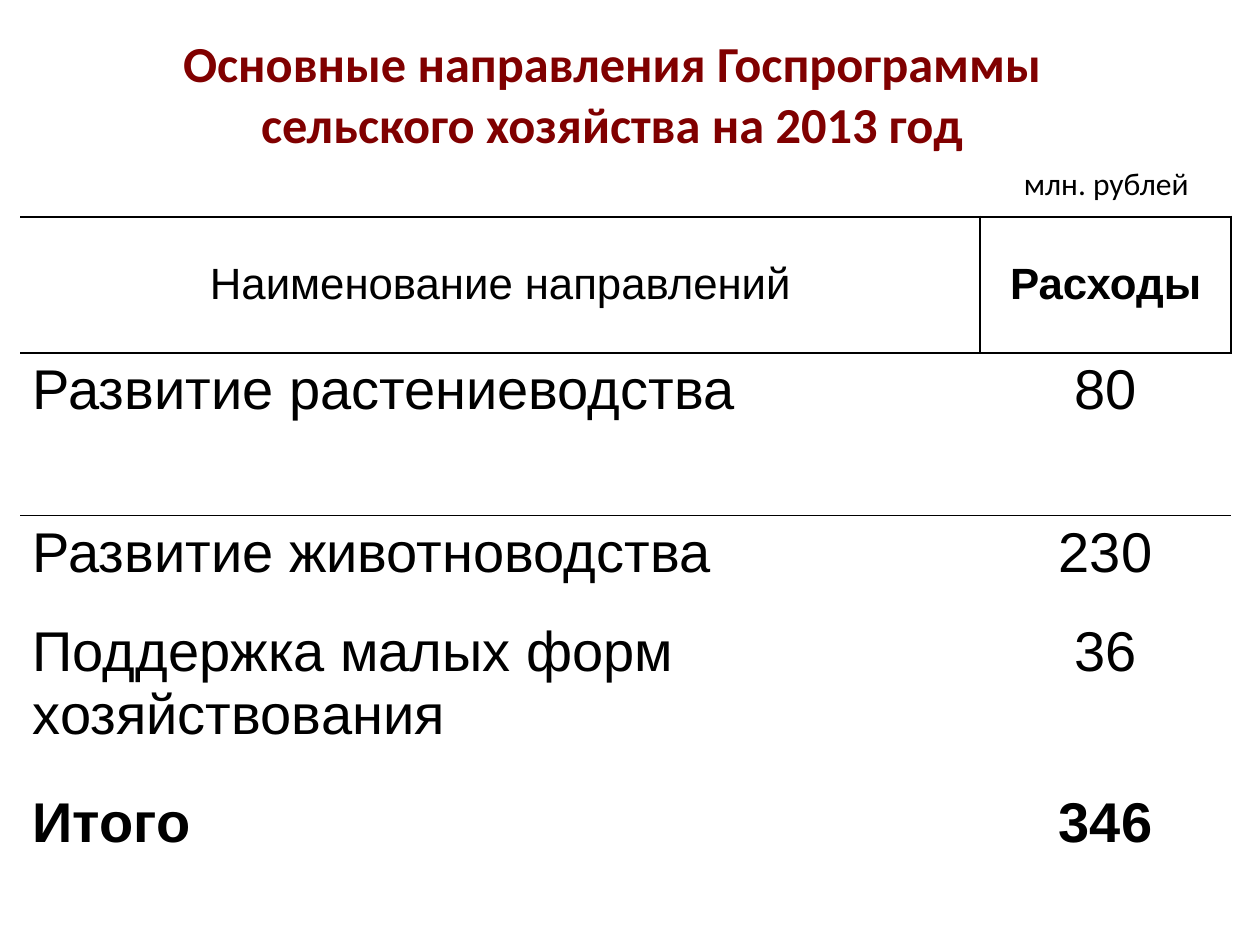
import pptx
import pptx.dml.color
import pptx.enum.text
import pptx.oxml
import pptx.oxml.ns
import pptx.util
from pptx.util import Inches

COLORS = {"title": "800000", "text": "000000", "cell": "FFFFFF"}
NO_STYLE = "{2D5ABB26-0587-4C30-8999-92F81FD0307C}"
ALIGN = pptx.enum.text.PP_ALIGN
ANCHOR = pptx.enum.text.MSO_ANCHOR


def write_text(frame, text, size, font="Arial", color="text", bold=False, align=ALIGN.CENTER):
    frame.word_wrap = True
    paragraph = frame.paragraphs[0]
    paragraph.alignment = align
    run = paragraph.add_run()
    run.text = text
    run.font.name = font
    run.font.size = pptx.util.Pt(size)
    run.font.bold = bold
    run.font.color.rgb = pptx.dml.color.RGBColor.from_string(COLORS[color])


def add_borders(cell, **widths):
    """Draw cell borders; widths in points, keyed by lnL, lnR, lnT, lnB."""
    properties = cell._tc.get_or_add_tcPr()
    sides = [side for side in ("lnL", "lnR", "lnT", "lnB") if side in widths]
    for index, side in enumerate(sides):
        properties.insert(index, pptx.oxml.parse_xml(
            f'<a:{side} {pptx.oxml.ns.nsdecls("a")} w="{pptx.util.Pt(widths[side])}">'
            f'<a:solidFill><a:srgbClr val="{COLORS["text"]}"/></a:solidFill></a:{side}>'))


presentation = pptx.Presentation()
presentation.slide_width = Inches(10)
presentation.slide_height = Inches(7.5)
slide = presentation.slides.add_slide(presentation.slide_layouts[5])

title = slide.shapes.title
title.left, title.top, title.width, title.height = (
    Inches(value) for value in (0.5, 0.34, 8.72, 0.79))
title.text_frame.auto_size = pptx.enum.text.MSO_AUTO_SIZE.NONE
title.text_frame.vertical_anchor = ANCHOR.MIDDLE
write_text(title.text_frame, "Основные направления Госпрограммы сельского хозяйства на 2013 год",
           28.8, font="Calibri", color="title", bold=True)

rows = [
    ("Наименование направлений", "Расходы", 1.08),
    ("Развитие растениеводства", "80", 1.29),
    ("Развитие животноводства", "230", 0.79),
    ("Поддержка малых форм хозяйствования", "36", 1.35),
    ("Итого", "346", 1.03),
]
table = slide.shapes.add_table(
    len(rows), 2, Inches(0.16), Inches(1.72), Inches(9.61), Inches(5.54)).table
table.first_row = table.horz_banding = False
table._tbl.tblPr.find(pptx.oxml.ns.qn("a:tableStyleId")).text = NO_STYLE
for column, width in zip(table.columns, (7.62, 1.99)):
    column.width = Inches(width)

last_row = len(rows) - 1
for row_index, (name, amount, height) in enumerate(rows):
    table.rows[row_index].height = Inches(height)
    is_header = row_index == 0
    for column_index, text in enumerate((name, amount)):
        cell = table.cell(row_index, column_index)
        cell.fill.solid()
        cell.fill.fore_color.rgb = pptx.dml.color.RGBColor.from_string(COLORS["cell"])
        cell.vertical_anchor = ANCHOR.MIDDLE if is_header else ANCHOR.TOP
        write_text(cell.text_frame, text, 25 if is_header else 32,
                   bold=row_index == last_row or (is_header and column_index == 1),
                   align=ALIGN.CENTER if is_header or column_index == 1 else ALIGN.LEFT)

add_borders(table.cell(0, 0), lnR=1.5, lnT=1.5, lnB=1)
add_borders(table.cell(0, 1), lnL=1.5, lnR=1.5, lnT=1.5, lnB=1)
for column_index in range(2):
    add_borders(table.cell(1, column_index), lnT=1)

unit_label = slide.shapes.add_textbox(Inches(7.56), Inches(1.25), Inches(2.44), Inches(0.4))
write_text(unit_label.text_frame, "млн. рублей", 18, font="Calibri")

presentation.save("out.pptx")
